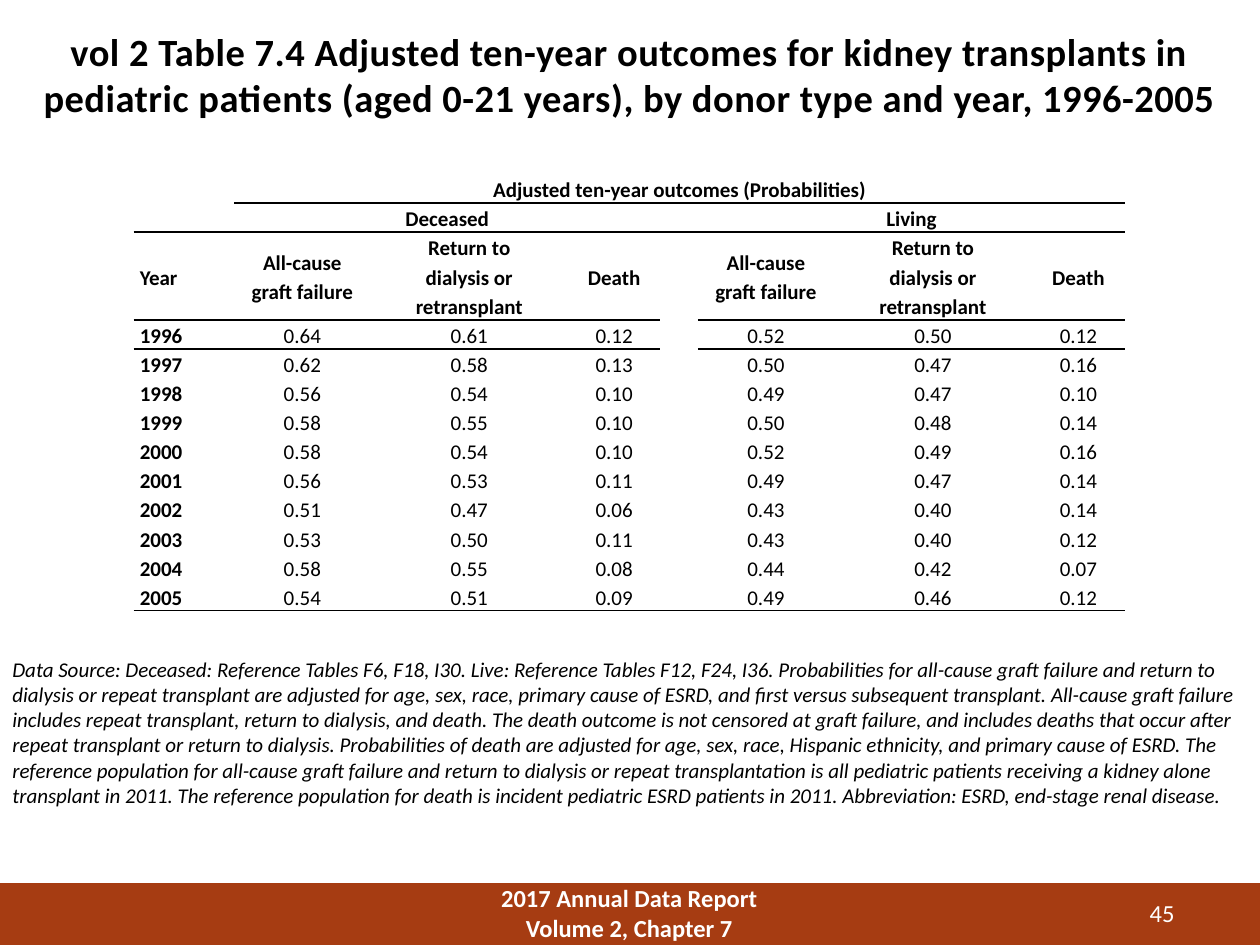
from lxml.etree import SubElement
from pptx import Presentation
from pptx.dml.color import RGBColor
from pptx.enum.shapes import MSO_SHAPE
from pptx.enum.text import MSO_ANCHOR, PP_ALIGN
from pptx.oxml.ns import qn
from pptx.util import Inches, Pt

BLACK = RGBColor(0x00, 0x00, 0x00)
WHITE = RGBColor(0xFF, 0xFF, 0xFF)
RUST = RGBColor(0xA6, 0x3C, 0x12)
NO_GRID_STYLE = "{2D5ABB26-0587-4C30-8999-92F81FD0307C}"

TITLE = (
    "vol 2 Table 7.4 Adjusted ten-year outcomes for kidney transplants in "
    "pediatric patients (aged 0-21 years), by donor type and year, 1996-2005"
)
SOURCE_SENTENCES = [
    "Data Source: Deceased: Reference Tables F6, F18, I30.",
    "Live: Reference Tables F12, F24, I36.",
    "Probabilities for all-cause graft failure and return to dialysis or repeat transplant are "
    "adjusted for age, sex, race, primary cause of ESRD, and first versus subsequent transplant.",
    "All-cause graft failure includes repeat transplant, return to dialysis, and death.",
    "The death outcome is not censored at graft failure, and includes deaths that occur after "
    "repeat transplant or return to dialysis.",
    "Probabilities of death are adjusted for age, sex, race, Hispanic ethnicity, "
    "and primary cause of ESRD.",
    "The reference population for all-cause graft failure and return to dialysis or repeat "
    "transplantation is all pediatric patients receiving a kidney alone transplant in 2011.",
    "The reference population for death is incident pediatric ESRD patients in 2011.",
    "Abbreviation: ESRD, end-stage renal disease.",
]

OUTCOMES = ["All-cause\vgraft failure", "Return to\vdialysis or\vretransplant", "Death"]
PROBABILITIES = {
    1996: ("0.64 0.61 0.12", "0.52 0.50 0.12"),
    1997: ("0.62 0.58 0.13", "0.50 0.47 0.16"),
    1998: ("0.56 0.54 0.10", "0.49 0.47 0.10"),
    1999: ("0.58 0.55 0.10", "0.50 0.48 0.14"),
    2000: ("0.58 0.54 0.10", "0.52 0.49 0.16"),
    2001: ("0.56 0.53 0.11", "0.49 0.47 0.14"),
    2002: ("0.51 0.47 0.06", "0.43 0.40 0.14"),
    2003: ("0.53 0.50 0.11", "0.43 0.40 0.12"),
    2004: ("0.58 0.55 0.08", "0.44 0.42 0.07"),
    2005: ("0.54 0.51 0.09", "0.49 0.46 0.12"),
}
HEADER_ROWS = [
    ["", "Adjusted ten-year outcomes (Probabilities)"] + [""] * 6,
    ["", "Deceased", "", "", "", "Living", "", ""],
    ["Year", *OUTCOMES, "", *OUTCOMES],
]
BODY_ROWS = [
    [str(year), *deceased.split(), "", *living.split()]
    for year, (deceased, living) in PROBABILITIES.items()
]
COLUMN_WIDTHS = [0.8, 1.08, 1.57, 0.73, 0.3, 1.08, 1.57, 0.74]
ROW_HEIGHT = 0.23
OUTCOME_ROW_HEIGHT = 0.7
MERGES = [(0, 1, 7), (1, 1, 3), (1, 5, 7)]
GAP_COLUMN = 4
OUTCOME_COLUMNS = [column for column in range(8) if column != GAP_COLUMN]
RULED_COLUMNS = {
    0: range(1, 8),
    1: OUTCOME_COLUMNS,
    2: OUTCOME_COLUMNS,
    12: range(8),
}


class SlideBuilder:
    font_name = "Calibri"

    def __init__(self, slide):
        self.slide = slide

    def format_paragraph(self, paragraph, size, color, align, bold=False, italic=False, spacing=0):
        paragraph.alignment = align
        for run in paragraph.runs:
            run.font.name = self.font_name
            run.font.size = Pt(size)
            run.font.color.rgb = color
            run.font.bold = bold
            run.font.italic = italic
            if spacing:
                run.font._element.set("spc", str(spacing))

    def bar(self, left, top, width, height, color):
        shape = self.slide.shapes.add_shape(
            MSO_SHAPE.RECTANGLE, Inches(left), Inches(top), Inches(width), Inches(height)
        )
        shape.shadow.inherit = False
        shape.fill.solid()
        shape.fill.fore_color.rgb = color
        shape.line.fill.background()

    def text(self, text, left, top, width, height, size, color=BLACK,
             align=PP_ALIGN.LEFT, anchor=MSO_ANCHOR.TOP, **style):
        shape = self.slide.shapes.add_textbox(
            Inches(left), Inches(top), Inches(width), Inches(height)
        )
        text_frame = shape.text_frame
        text_frame.word_wrap = True
        text_frame.vertical_anchor = anchor
        text_frame.text = text
        for paragraph in text_frame.paragraphs:
            self.format_paragraph(paragraph, size, color, align, **style)

    def border(self, cell, side):
        properties = cell._tc.get_or_add_tcPr()
        line = SubElement(properties, qn(f"a:{side}"), w=str(Pt(1)))
        fill = SubElement(line, qn("a:solidFill"))
        SubElement(fill, qn("a:srgbClr"), val=str(BLACK))

    def cell(self, cell, text, size, align, bold):
        cell.margin_left = cell.margin_right = Inches(0.05)
        cell.margin_top = cell.margin_bottom = 0
        cell.vertical_anchor = MSO_ANCHOR.MIDDLE
        cell.fill.background()
        cell.text_frame.text = text
        paragraph = cell.text_frame.paragraphs[0]
        paragraph.line_spacing = 1.15
        self.format_paragraph(paragraph, size, BLACK, align, bold)
        if not text:
            SubElement(paragraph._p, qn("a:endParaRPr"), sz=str(size * 100))

    def table(self, rows, left, top, widths, heights, header_count, merges, ruled_columns):
        table = self.slide.shapes.add_table(
            len(rows), len(widths), Inches(left), Inches(top),
            Inches(sum(widths)), Inches(sum(heights))
        ).table
        table.first_row = table.horz_banding = False
        table._tbl.tblPr.find(qn("a:tableStyleId")).text = NO_GRID_STYLE
        for column, width in zip(table.columns, widths):
            column.width = Inches(width)
        for row, height in zip(table.rows, heights):
            row.height = Inches(height)
        for row, texts in enumerate(rows):
            for column, text in enumerate(texts):
                cell = table.cell(row, column)
                if column in ruled_columns.get(row - 1, []):
                    self.border(cell, "lnT")
                if column in ruled_columns.get(row, []):
                    self.border(cell, "lnB")
                align = PP_ALIGN.CENTER if column else PP_ALIGN.LEFT
                self.cell(cell, text, 12, align, row < header_count or column == 0)
        for row, first, last in merges:
            table.cell(row, first).merge(table.cell(row, last))


def main():
    presentation = Presentation()
    presentation.slide_width = Inches(10)
    presentation.slide_height = Inches(7.5)
    builder = SlideBuilder(presentation.slides.add_slide(presentation.slide_layouts[6]))

    builder.bar(0, 7.01, 10, 0.49, RUST)
    builder.text("2017 Annual Data Report\nVolume 2, Chapter 7", 3.58, 6.96, 2.83, 0.33,
                 14, WHITE, PP_ALIGN.CENTER, bold=True)
    builder.text("45", 8.42, 7.08, 1, 0.3, 14, WHITE, PP_ALIGN.RIGHT)
    builder.text(TITLE, 0, 0.15, 10, 0.88, 22, align=PP_ALIGN.CENTER,
                 anchor=MSO_ANCHOR.MIDDLE, bold=True, spacing=30)

    rows = HEADER_ROWS + BODY_ROWS
    heights = [ROW_HEIGHT] * len(rows)
    heights[2] = OUTCOME_ROW_HEIGHT
    builder.table(rows, 1.06, 1.38, COLUMN_WIDTHS, heights, len(HEADER_ROWS),
                  MERGES, RULED_COLUMNS)
    builder.text(" ".join(SOURCE_SENTENCES), 0, 5.16, 10, 1.31, 12, italic=True)

    presentation.save("out.pptx")


if __name__ == "__main__":
    main()
